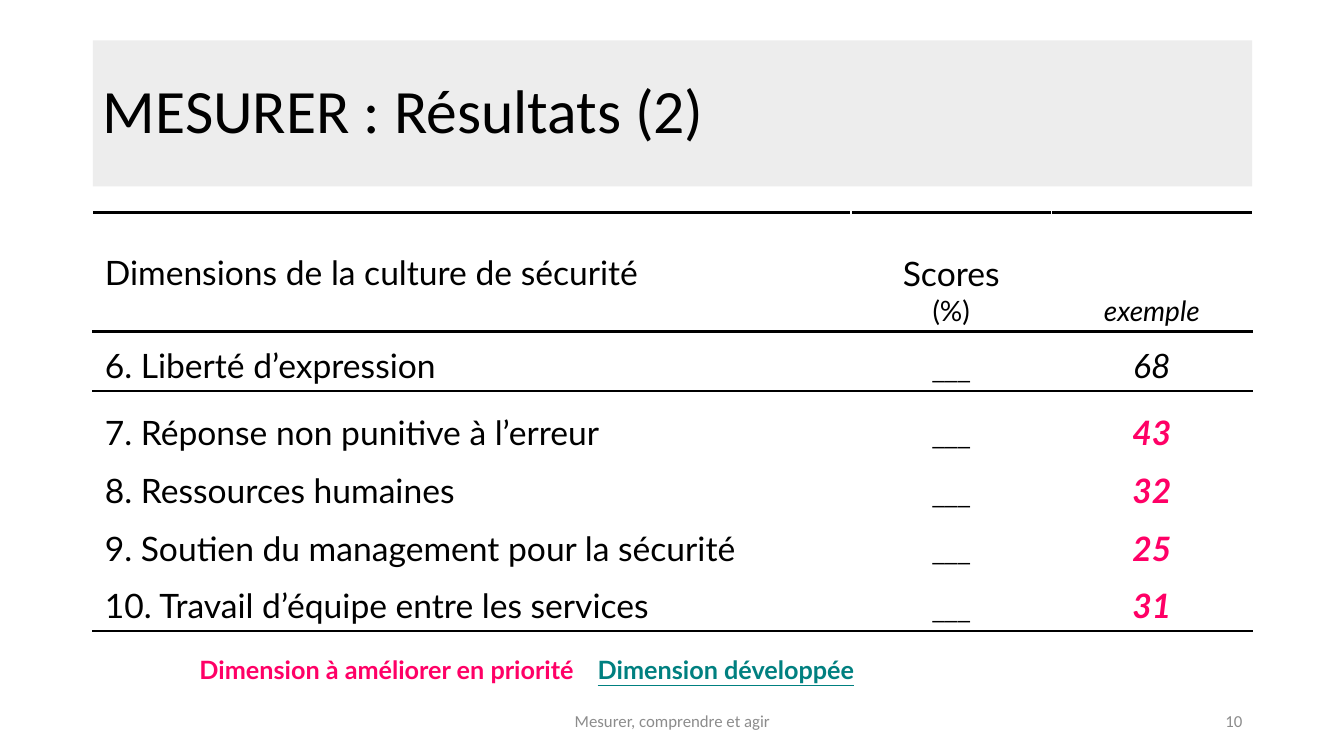
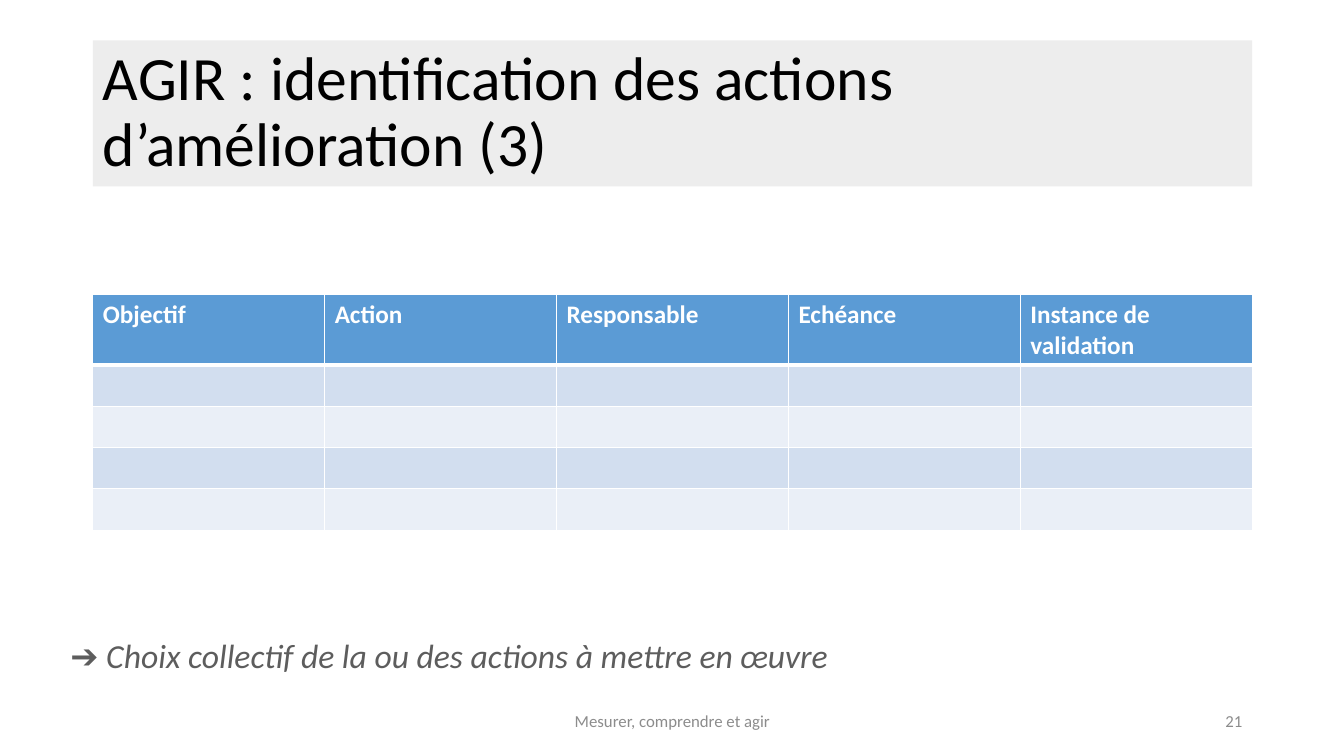
from dataclasses import dataclass
from typing import Optional

from lxml.etree import SubElement
from pptx import Presentation
from pptx.dml.color import RGBColor
from pptx.enum.text import MSO_ANCHOR, MSO_AUTO_SIZE, PP_ALIGN
from pptx.oxml import parse_xml
from pptx.oxml.ns import nsdecls, qn
from pptx.slide import Slide
from pptx.table import Table, _Cell
from pptx.text.text import TextFrame, _Paragraph
from pptx.util import Inches, Pt


@dataclass(frozen=True)
class Theme:
    black: str = "000000"
    white: str = "FFFFFF"
    band: str = "EDEDED"
    priority: str = "FF0066"
    developed: str = "008080"
    footer: str = "8C8C8C"
    remark: str = "5D5D5D"
    header: str = "5B9BD5"
    stripes: tuple[str, str] = ("D2DEEF", "EAEFF7")
    title_size: int = 44
    body_size: int = 24
    unit_size: int = 20
    small_size: int = 18
    footer_size: int = 12
    main_font: str = "Calibri"
    data_font: str = "Lato"


THEME = Theme()
LEFT, WIDTH = 0.92, 11.5


@dataclass(frozen=True)
class Style:
    size: int = THEME.body_size
    color: str = THEME.black
    font: str = THEME.data_font
    bold: bool = False
    italic: bool = False
    underline: bool = False


@dataclass(frozen=True)
class Score:
    dimension: str
    example: int
    height: float
    priority: bool = True
    line_spacing: float = 1.0


TITLE = Style(THEME.title_size, font=THEME.main_font)
FOOTER = Style(THEME.footer_size, THEME.footer, THEME.main_font)
REMARK = Style(color=THEME.remark, font=THEME.main_font, italic=True)
BODY = Style()
UNIT = Style(THEME.unit_size)
UNIT_ITALIC = Style(THEME.unit_size, italic=True)
BLANK = Style(THEME.small_size, font=THEME.main_font)
EXAMPLE = Style(italic=True)
EXAMPLE_PRIORITY = Style(color=THEME.priority, bold=True, italic=True)
KEY_PRIORITY = Style(THEME.small_size, THEME.priority, bold=True)
KEY_DEVELOPED = Style(THEME.small_size, THEME.developed, bold=True, underline=True)
COLUMN_HEAD = Style(THEME.small_size, THEME.white, THEME.main_font, bold=True)

SCORES = (
    Score("6. Liberté d’expression", 68, 0.59, priority=False),
    Score("7. Réponse non punitive à l’erreur", 43, 0.65, line_spacing=1.4),
    Score("8. Ressources humaines", 32, 0.58),
    Score("9. Soutien du management pour la sécurité", 25, 0.57),
    Score("10. Travail d’équipe entre les services", 31, 0.57),
)
ACTION_COLUMNS = ("Objectif", "Action", "Responsable", "Echéance", "Instance de validation")


def set_all(target: object, values: dict) -> None:
    for name, value in values.items():
        setattr(target, name, value)


def add_run(p: _Paragraph, text: str, style: Style) -> None:
    r = p.add_run()
    r.text = text
    set_all(r.font, {
        "size": Pt(style.size), "name": style.font, "bold": style.bold,
        "italic": style.italic, "underline": style.underline,
    })
    r.font.color.rgb = RGBColor.from_string(style.color)


def write(p: _Paragraph, text: str, style: Style, **layout: object) -> None:
    """Fill a paragraph; layout holds its alignment and spacing."""
    set_all(p, layout)
    add_run(p, text, style)


def add_text(s: Slide, left: float, top: float, width: float, height: float,
             anchor: MSO_ANCHOR = MSO_ANCHOR.TOP) -> TextFrame:
    tf = s.shapes.add_textbox(*map(Inches, (left, top, width, height))).text_frame
    set_all(tf, {"word_wrap": True, "vertical_anchor": anchor})
    return tf


def add_slide(prs: Presentation, title: str, number: int) -> Slide:
    """Start a slide with its title band, footer and number."""
    s = prs.slides.add_slide(prs.slide_layouts[5])
    sp = s.shapes.title
    set_all(sp, {"left": Inches(LEFT), "top": Inches(0.4),
                 "width": Inches(WIDTH), "height": Inches(1.45)})
    sp.fill.solid()
    sp.fill.fore_color.rgb = RGBColor.from_string(THEME.band)
    tf = sp.text_frame
    set_all(tf, {"word_wrap": True, "auto_size": MSO_AUTO_SIZE.NONE,
                 "vertical_anchor": MSO_ANCHOR.MIDDLE})
    write(tf.paragraphs[0], title, TITLE, alignment=PP_ALIGN.LEFT, line_spacing=0.9)
    for text, left, width, align in (
        ("Mesurer, comprendre et agir", 4.42, 4.5, PP_ALIGN.CENTER),
        (str(number), 9.42, 3, PP_ALIGN.RIGHT),
    ):
        tf = add_text(s, left, 6.95, width, 0.4, MSO_ANCHOR.MIDDLE)
        write(tf.paragraphs[0], text, FOOTER, alignment=align)
    return s


def add_grid(s: Slide, top: float, widths: list[float], heights: list[float]) -> Table:
    frame = s.shapes.add_table(len(heights), len(widths), *map(
        Inches, (LEFT, top, sum(widths), sum(heights))))
    table = frame.table
    for column, width in zip(table.columns, widths):
        column.width = Inches(width)
    for row, height in zip(table.rows, heights):
        row.height = Inches(height)
    return table


def set_fill(cell: _Cell, color: Optional[str]) -> None:
    if color is None:
        cell.fill.background()
    else:
        cell.fill.solid()
        cell.fill.fore_color.rgb = RGBColor.from_string(color)


def set_borders(cell: _Cell, color: str, widths: dict[str, float]) -> None:
    """Draw the sides named in widths (L, R, T, B, in that order), in points."""
    tc_pr = cell._tc.get_or_add_tcPr()
    for index, (side, width) in enumerate(widths.items()):
        tc_pr.insert(index, parse_xml(
            f'<a:ln{side} {nsdecls("a")} w="{int(Pt(width))}"><a:solidFill>'
            f'<a:srgbClr val="{color}"/></a:solidFill></a:ln{side}>'))


def add_score_table(s: Slide) -> None:
    table = add_grid(s, 2.11, [7.52, 1.99, 1.99], [1.18] + [x.height for x in SCORES])
    rules = [{"T": 2.25, "B": 2.25}, {"T": 2.25}, {}, {}, {}, {"B": 2.25}]
    for row, sides in zip(table.rows, rules):
        for cell in row.cells:
            set_all(cell, {"vertical_anchor": MSO_ANCHOR.BOTTOM,
                           "margin_left": Inches(0.12), "margin_right": Inches(0.12)})
            set_fill(cell, None)
            set_borders(cell, THEME.black, sides)

    before = {"space_before": Pt(5)}
    centred = {"alignment": PP_ALIGN.CENTER}
    tight = {**before, **centred, "line_spacing": 0.8}
    dimension, score, example = table.rows[0].cells
    dimension.vertical_anchor = MSO_ANCHOR.MIDDLE
    write(dimension.text_frame.paragraphs[0], "Dimensions de la culture de sécurité",
          BODY, **before)
    write(score.text_frame.paragraphs[0], "Scores", BODY, **tight)
    write(score.text_frame.add_paragraph(), "(%)", UNIT, **tight)
    write(example.text_frame.paragraphs[0], "exemple", UNIT_ITALIC, **tight)

    for i, item in enumerate(SCORES, 1):
        style = EXAMPLE_PRIORITY if item.priority else EXAMPLE
        dimension, score, example = (c.text_frame.paragraphs[0] for c in table.rows[i].cells)
        write(dimension, item.dimension, BODY, line_spacing=item.line_spacing, **before)
        write(score, "___", BLANK, **centred)
        write(example, str(item.example), style, **before, **centred)


def add_key(s: Slide) -> None:
    p = add_text(s, 1.88, 6.44, 7.62, 0.4).paragraphs[0]
    tabs = SubElement(p._p.get_or_add_pPr(), qn("a:tabLst"))
    SubElement(tabs, qn("a:tab"), pos=str(Inches(3.95)), algn="l")
    add_run(p, "Dimension à améliorer en priorité\t", KEY_PRIORITY)
    add_run(p, "Dimension développée", KEY_DEVELOPED)


def add_action_table(s: Slide) -> None:
    count = len(ACTION_COLUMNS)
    table = add_grid(s, 2.92, [WIDTH / count] * count, [0.7] + [0.41] * 4)
    for i, row in enumerate(table.rows):
        fill = THEME.stripes[(i - 1) % 2] if i else THEME.header
        sides = {"L": 1, "R": 1, "T": 3 if i == 1 else 1, "B": 1 if i else 3}
        for cell in row.cells:
            set_fill(cell, fill)
            set_borders(cell, THEME.white, sides)
    for cell, text in zip(table.rows[0].cells, ACTION_COLUMNS):
        write(cell.text_frame.paragraphs[0], text, COLUMN_HEAD)


def main() -> None:
    prs = Presentation()
    prs.slide_width, prs.slide_height = Inches(13.33), Inches(7.5)

    s = add_slide(prs, "MESURER : Résultats (2)", 10)
    add_score_table(s)
    add_key(s)

    s = add_slide(prs, "AGIR : identification des actions d’amélioration (3)", 21)
    add_action_table(s)
    write(add_text(s, 0.6, 6.25, 11.82, 0.5).paragraphs[0],
          "➔ Choix collectif de la ou des actions à mettre en œuvre", REMARK)

    prs.save("out.pptx")


if __name__ == "__main__":
    main()
